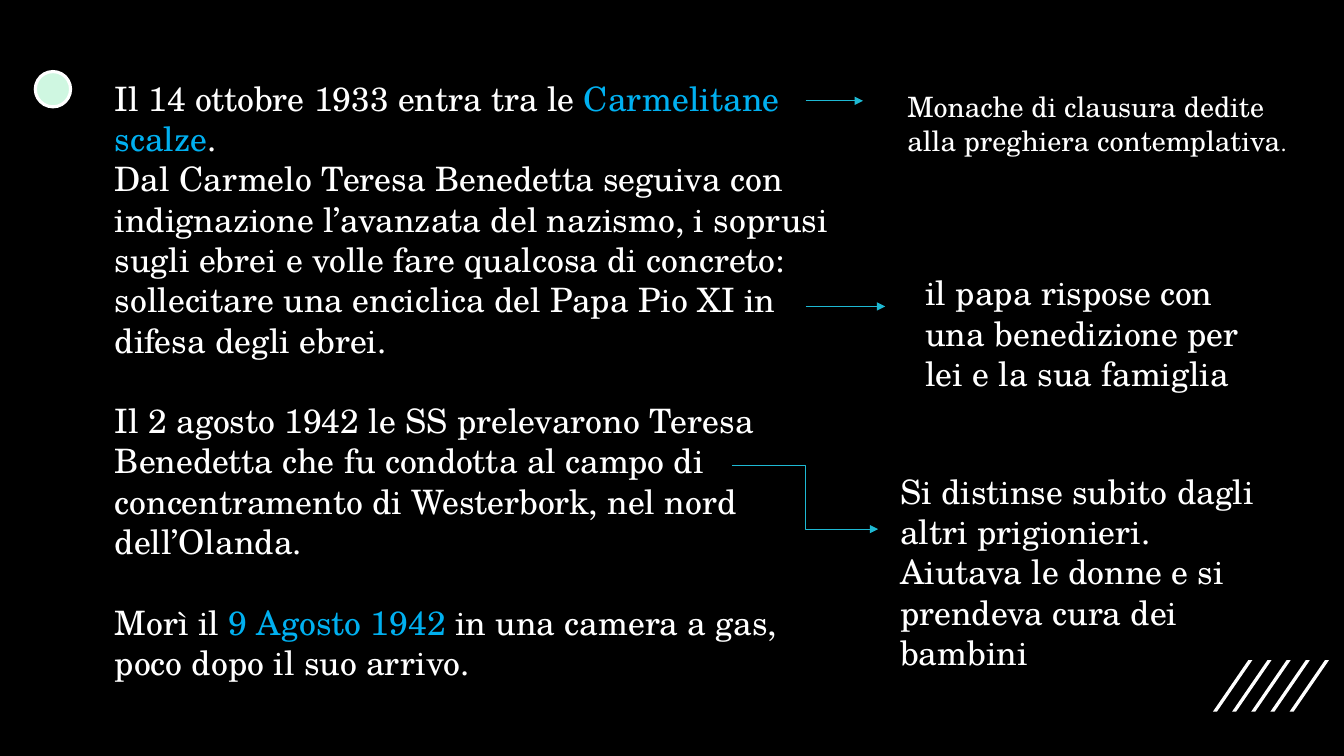
"""Build a slide on the Carmelite years and death of Teresa Benedetta."""
from lxml import etree
from pptx import Presentation
from pptx.dml.color import RGBColor
from pptx.enum.shapes import MSO_CONNECTOR, MSO_SHAPE
from pptx.oxml.ns import qn
from pptx.util import Inches, Pt

STRAIGHT, ELBOW = MSO_CONNECTOR.STRAIGHT, MSO_CONNECTOR.ELBOW
OVAL = MSO_SHAPE.OVAL
BLACK = RGBColor(0x00, 0x00, 0x00)
WHITE = RGBColor(0xFF, 0xFF, 0xFF)
BLUE = RGBColor(0x00, 0xB0, 0xF0)
TEAL = RGBColor(0x1E, 0xB9, 0xD3)
MINT = RGBColor(0xCF, 0xF7, 0xE1)
FONT = "TeX Gyre Schola"
LINE_GAP = 28.8

# (box, paragraphs); paragraph = (space before, runs); run = (text, size, colour)
TEXTS = [
    ((1.04, 0.72, 7.36, 6.97), [
        (0, [("Il 14 ottobre 1933 entra tra le ", 24, WHITE),
             ("Carmelitane scalze", 24, BLUE), (".", 24, WHITE)]),
        (0, [("Dal Carmelo Teresa Benedetta seguiva con indignazione l’avanzata "
              "del nazismo, i soprusi sugli ebrei e volle fare qualcosa di "
              "concreto: sollecitare una enciclica del Papa Pio XI in difesa "
              "degli ebrei.", 24, WHITE)]),
        (LINE_GAP, [("Il 2 agosto 1942 le SS prelevarono Teresa Benedetta che fu "
                     "condotta al campo di concentramento di Westerbork, nel nord "
                     "dell’Olanda.", 24, WHITE)]),
        (LINE_GAP, [("Morì il ", 24, WHITE), ("9 Agosto 1942 ", 24, BLUE),
                    ("in una camera a gas, poco dopo il suo arrivo.", 24, WHITE)]),
    ]),
    ((9.08, 2.65, 3.51, 1.31), [
        (0, [("il papa rispose con una benedizione per lei e la sua famiglia",
              24, WHITE)])]),
    ((8.83, 4.62, 3.81, 2.12), [
        (0, [("Si distinse subito dagli altri prigionieri. Aiutava le donne e si "
              "prendeva cura dei bambini", 24, WHITE)])]),
    ((8.9, 0.84, 4.01, 0.77), [
        (0, [("Monache di clausura dedite alla preghiera contemplativa", 20, WHITE),
             (".", 16, WHITE)])]),
]
ARROWS = [
    (STRAIGHT, 7.99, 3.04, 8.78, 3.04),
    (ELBOW, 7.26, 4.62, 8.71, 5.25),
    (STRAIGHT, 7.99, 1, 8.56, 1),
]
STRIPES, STRIPE_LEFT, STRIPE_STEP = 5, 12.03, 0.19
STRIPE_TOP, STRIPE_BOTTOM = 6.55, 7.06
STRIPE_SLANT, STRIPE_WIDTH = 0.35, 0.04


def add_stripe(s, left):
    """Draw one slanted stripe."""
    right = left + STRIPE_SLANT
    corners = [(left + STRIPE_WIDTH, STRIPE_BOTTOM), (left, STRIPE_BOTTOM),
               (right, STRIPE_TOP), (right + STRIPE_WIDTH, STRIPE_TOP)]
    points = [(Inches(x), Inches(y)) for x, y in corners]
    builder = s.shapes.build_freeform(*points[0])
    builder.add_line_segments(points[1:], close=True)
    sp = builder.convert_to_shape()
    sp.shadow.inherit = False
    sp.fill.solid()
    sp.fill.fore_color.rgb = WHITE
    sp.line.fill.background()


def add_dot(s):
    """Draw the round marker."""
    sp = s.shapes.add_shape(OVAL, *map(Inches, (0.35, 0.71, 0.35, 0.35)))
    sp.shadow.inherit = False
    sp.fill.solid()
    sp.fill.fore_color.rgb = MINT
    sp.line.color.rgb = WHITE
    sp.line.width = Pt(2.25)


def add_text(s, box, paragraphs):
    """Add a wrapped text box."""
    tf = s.shapes.add_textbox(*map(Inches, box)).text_frame
    tf.word_wrap = True
    for i, (before, runs) in enumerate(paragraphs):
        p = tf.paragraphs[0] if i == 0 else tf.add_paragraph()
        p.space_before = Pt(before)
        for text, size, color in runs:
            r = p.add_run()
            r.text = text
            r.font.name = FONT
            r.font.size = Pt(size)
            r.font.color.rgb = color


def add_arrow(s, kind, *ends):
    """Add a thin connector with an arrowhead at its end."""
    arrow = s.shapes.add_connector(kind, *map(Inches, ends))
    arrow.line.color.rgb = TEAL
    arrow.line.width = Pt(0.5)
    etree.SubElement(arrow.line._get_or_add_ln(), qn("a:tailEnd"), type="triangle")
    etree.SubElement(arrow._element.spPr, qn("a:effectLst"))


def main():
    """Assemble and save the slide."""
    prs = Presentation()
    prs.slide_width, prs.slide_height = Inches(13.33), Inches(7.5)
    s = prs.slides.add_slide(prs.slide_layouts[6])
    s.background.fill.solid()
    s.background.fill.fore_color.rgb = BLACK
    for i in range(STRIPES):
        add_stripe(s, STRIPE_LEFT + i * STRIPE_STEP)
    add_dot(s)
    for box, paragraphs in TEXTS:
        add_text(s, box, paragraphs)
    for arrow in ARROWS:
        add_arrow(s, *arrow)
    prs.save("out.pptx")


if __name__ == "__main__":
    main()
